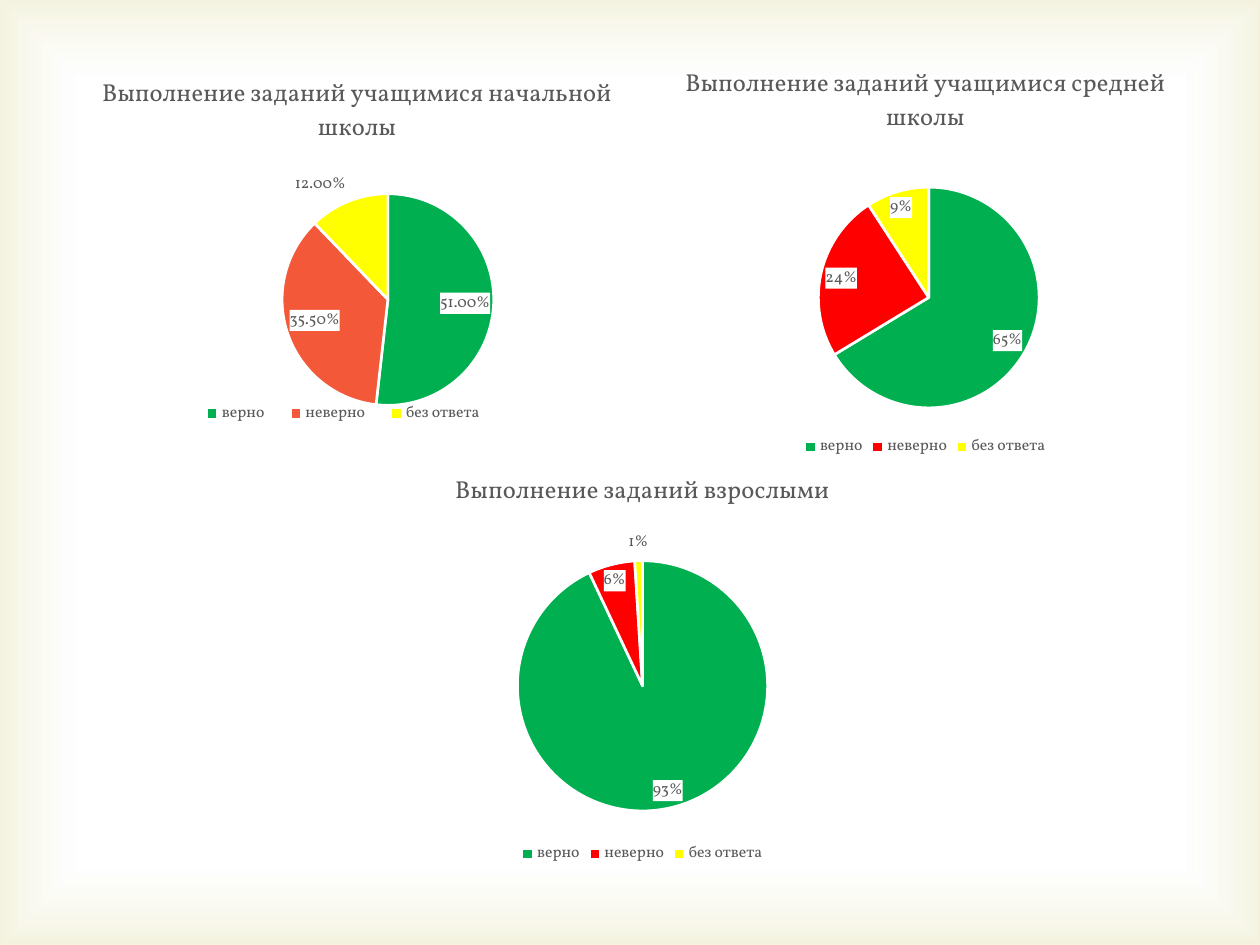
"""Build a slide with three pie charts of task results by age group."""
from dataclasses import dataclass

from lxml.etree import SubElement
from pptx import Presentation
from pptx.chart.data import CategoryChartData
from pptx.dml.color import RGBColor
from pptx.enum.chart import XL_CHART_TYPE, XL_LABEL_POSITION, XL_LEGEND_POSITION
from pptx.oxml import parse_xml
from pptx.oxml.ns import nsdecls, qn
from pptx.util import Inches, Pt


@dataclass(frozen=True)
class Theme:
    font: str = "Vollkorn"
    text: str = "595959"
    base: str = "000000"
    white: str = "FFFFFF"
    edge: str = "D1CA75"
    green: str = "00B050"
    red: str = "FF0000"
    coral: str = "F35839"
    yellow: str = "FFFF00"
    title_size: float = 14
    base_size: float = 10
    label_size: float = 9


theme = Theme()


def write_text(tf, text, **fmt):
    tf.text = text
    style_font(tf.paragraphs[0].runs[0].font, **fmt)


def style_font(font, size=theme.label_size, color=theme.text, bold=False):
    font.name = theme.font
    font.size = Pt(size)
    font.bold = bold
    font.color.rgb = RGBColor.from_string(color)


prs = Presentation()
prs.slide_width, prs.slide_height = Inches(10), Inches(7.5)
s = prs.slides.add_slide(prs.slide_layouts[6])

frame = s.shapes.add_shape(1, 0, 0, prs.slide_width, prs.slide_height)
frame.shadow.inherit = False
frame.line.fill.background()
stops = "".join(
    f'<a:gs pos="{pos}000"><a:srgbClr val="{color}"><a:alpha val="{alpha}000"/></a:srgbClr></a:gs>'
    for pos, color, alpha in ((83, theme.white, 11), (100, theme.edge, 23))
)
frame_pr = frame.element.spPr
frame_pr.find(qn("a:prstGeom")).addnext(parse_xml(
    f'<a:gradFill {nsdecls("a")} rotWithShape="1"><a:gsLst>{stops}</a:gsLst>'
    '<a:path path="rect"><a:fillToRect l="50000" t="50000" r="50000" b="50000"/></a:path>'
    "</a:gradFill>"
))

categories = ("верно", "неверно", "без ответа")
pies = (
    ("Выполнение заданий учащимися начальной школы", (0.12, 0.44, 5.43, 3.23),
     (0.51, 0.355, 0.12), theme.coral, "0.00%", (0.39, 0.34, 0.31, 0.52), (0.25, 0.84, 0.46, 0.08)),
    ("Выполнение заданий учащимися средней школы", (4.69, 0.36, 5.31, 3.31),
     (0.65, 0.24, 0.09), theme.red, "0%", (0.34, 0.34, 0.33, 0.53), None),
    ("Выполнение заданий взрослыми", (2.56, 3.59, 5.08, 3.31),
     (0.93, 0.06, 0.01), theme.red, "0%", (0.3, 0.26, 0.4, 0.6), None),
)

for title, box, values, wrong_color, number_format, plot_box, legend_box in pies:
    data = CategoryChartData(number_format=number_format)
    data.categories = categories
    data.add_series("Series 1", values)
    chart = s.shapes.add_chart(XL_CHART_TYPE.PIE, *map(Inches, box), data).chart
    style_font(chart.font, size=theme.base_size, color=theme.base)
    chart.has_title = True
    write_text(chart.chart_title.text_frame, title, size=theme.title_size)
    chart.chart_title.include_in_layout = False
    chart.has_legend = True
    chart.legend.position = XL_LEGEND_POSITION.BOTTOM
    chart.legend.include_in_layout = False
    style_font(chart.legend.font)

    plot = chart.plots[0]
    plot.vary_by_categories = True
    series = plot.series[0]
    for i, color in enumerate((theme.green, wrong_color, theme.yellow)):
        fmt = series.points[i].format
        fmt.fill.solid()
        fmt.fill.fore_color.rgb = RGBColor.from_string(color)
        fmt.line.color.rgb = RGBColor.from_string(theme.white)
        fmt.line.width = Pt(1.5)

    labels = series.data_labels
    labels.show_value = True
    labels.number_format = number_format
    labels.number_format_is_linked = False
    labels.position = XL_LABEL_POSITION.BEST_FIT
    style_font(labels.font)
    label_xml = series.data_labels._element
    label_xml.find(qn("c:txPr")).addprevious(parse_xml(
        f'<c:spPr {nsdecls("c", "a")}><a:solidFill><a:srgbClr val="{theme.white}"/></a:solidFill></c:spPr>'
    ))

    plot_area = chart.element.chart.plotArea
    for parent, rect in ((plot_area, plot_box), (chart.legend._element, legend_box)):
        if rect is None:
            continue
        layout = parent.find(qn("c:layout"))
        if layout is None:
            layout = parse_xml(f'<c:layout {nsdecls("c")}/>')
            if parent is plot_area:
                parent.insert(0, layout)
            else:
                parent.find(qn("c:legendPos")).addnext(layout)
        manual = SubElement(layout, qn("c:manualLayout"))
        if parent is plot_area:
            SubElement(manual, qn("c:layoutTarget")).set("val", "inner")
        for tag in ("xMode", "yMode"):
            SubElement(manual, qn(f"c:{tag}")).set("val", "edge")
        for tag, value in zip("xywh", rect):
            SubElement(manual, qn(f"c:{tag}")).set("val", str(value))

prs.save("out.pptx")
